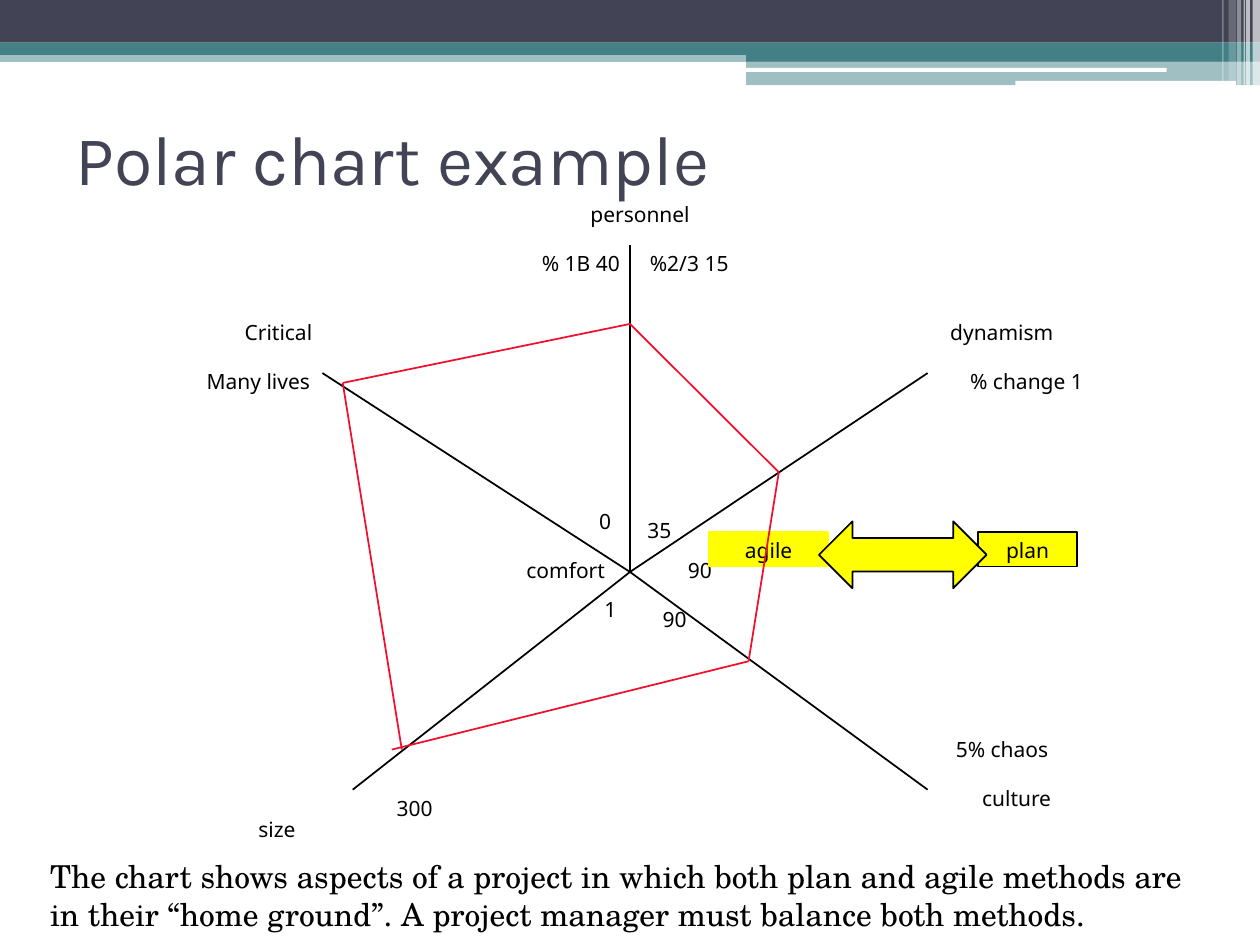
from collections import namedtuple
from dataclasses import dataclass
from itertools import pairwise

from lxml.etree import SubElement
from pptx import Presentation
from pptx.dml.color import RGBColor
from pptx.enum.shapes import MSO_CONNECTOR, MSO_SHAPE
from pptx.enum.text import MSO_ANCHOR, PP_ALIGN
from pptx.oxml.ns import qn
from pptx.util import Cm, Pt

Box = namedtuple("Box", "x y w h")  # centimetres


@dataclass(frozen=True)
class Theme:
    navy: str = "424456"
    teal: str = "438086"
    white: str = "FFFFFF"
    black: str = "000000"
    red: str = "F00F2C"
    yellow: str = "FFFF00"
    title_font: str = "Karla"
    label_font: str = "Noto Sans"
    body_font: str = "TeX Gyre Schola"
    title_size: int = 40
    label_size: int = 12
    body_size: int = 18
    line_width: int = 1


THEME = Theme()
LABEL_HEIGHT = 0.64

# Lengths below are offsets from the hub of the chart.
AXIS_ENDS = [(-6.2, -4.01), (0, -6.6), (6, -4.01), (-5.59, 4.39), (6, 4.39)]
PROFILE = [(-4.6, 3.58), (-5.79, -3.81), (0, -5), (3, -2.01), (2.39, 1.8), (-4.8, 3.58)]
LABELS = [  # text, left, top, width
    ("Critical", -8.99, -5.21, 3.81),
    ("personnel", -1.19, -7.59, 2.79),
    ("dynamism", 5.59, -5.21, 3.81),
    ("culture", 6.4, 4.19, 2.79),
    ("size", -8.41, 4.8, 2.59),
    ("Many lives", -8.99, -4.22, 3),
    ("comfort", -2.59, -0.41, 2.59),
    ("% 1B 40", -2.59, -6.6, 3.2),
    ("0", -1, -1.4, 1),
    ("%2/3 15", 0, -6.6, 2.39),
    ("35", 0, -1.22, 1.19),
    ("% change 1", 6.6, -4.22, 2.79),
    ("90", 0.61, -0.41, 1.6),
    ("5% chaos", 6, 3.2, 3),
    ("90", 0, 0.58, 1.8),
    ("1", -0.79, 0.38, 0.79),
    ("300", -5, 4.39, 1.32),
]


def to_cm(box):
    return [Cm(v) for v in box]


def add_text(sp, text, *, font=THEME.label_font, size=THEME.label_size,
             color=THEME.black, align=PP_ALIGN.LEFT, anchor=MSO_ANCHOR.TOP, bottom=0.13):
    tf = sp.text_frame
    tf.word_wrap = True
    tf.vertical_anchor = anchor
    tf.margin_bottom = Cm(bottom)
    p = tf.paragraphs[0]
    p.alignment = align
    r = p.add_run()
    r.text = text
    r.font.name = font
    r.font.size = Pt(size)
    r.font.color.rgb = RGBColor.from_string(color)


def add_label(sp, text):
    add_text(sp, text, align=PP_ALIGN.CENTER, bottom=0)


def add_block(s, box, fill, *, kind=MSO_SHAPE.RECTANGLE, line=None, opacity=100):
    sp = s.shapes.add_shape(kind, *to_cm(box))
    sp.shadow.inherit = False
    sp.fill.solid()
    sp.fill.fore_color.rgb = RGBColor.from_string(fill)
    if opacity < 100:
        color = sp._element.spPr.find(qn("a:solidFill"))[0]
        SubElement(color, qn("a:alpha")).set("val", str(opacity * 1000))
    if line:
        sp.line.color.rgb = RGBColor.from_string(line)
        sp.line.width = Pt(THEME.line_width)
    else:
        sp.line.fill.background()
    return sp


def add_line(s, start, end, color):
    line = s.shapes.add_connector(MSO_CONNECTOR.STRAIGHT, *to_cm(start + end))
    line.line.color.rgb = RGBColor.from_string(color)
    line.line.width = Pt(THEME.line_width)
    SubElement(line._element.spPr, qn("a:effectLst"))


def draw_header(s, box):
    half = box.w - 15.04
    bands = [  # left, top, width, height, colour, opacity
        (0, 1.02, box.w, 0.23, THEME.teal, 50),
        (0, 0, box.w, 0.86, THEME.navy, 100),
        (0, 0.86, box.w, 0.25, THEME.teal, 100),
        (15.04, 0.99, half, 0.25, THEME.teal, 100),
        (15.04, 1.22, half, 0.5, THEME.teal, 50),
    ]
    for x, y, w, h, color, opacity in bands:
        add_block(s, Box(box.x + x, box.y + y, w, h), color, opacity=opacity)

    for x, y, w, h in [(15.01, 1.37, 8.51, 0.08), (20.47, 1.63, 4.45, 0.1)]:
        add_block(s, Box(box.x + x, box.y + y, w, h), THEME.white,
                  kind=MSO_SHAPE.ROUNDED_RECTANGLE)

    stripes = [  # distance from the right edge, width, height, opacity
        (0.15, 0.15, box.h, 65), (0.28, 0.08, box.h, 65), (0.33, 0.03, box.h, 60),
        (0.46, 0.08, box.h, 40), (0.63, 0.15, 1.63, 20), (0.76, 0.03, 1.63, 30),
    ]
    for inset, w, h, opacity in stripes:
        add_block(s, Box(box.x + box.w - inset, box.y, w, h), THEME.white, opacity=opacity)


def draw_title(s, box):
    add_text(s.shapes.add_textbox(*to_cm(box)), "Polar chart example",
             font=THEME.title_font, size=THEME.title_size, color=THEME.navy,
             anchor=MSO_ANCHOR.MIDDLE)


def draw_polar_chart(s, box):
    """Place axes, labels, method scale and project profile around the box centre."""
    hub_x, hub_y = box.x + box.w / 2, box.y + box.h / 2

    def at(x, y, *size):
        return (hub_x + x, hub_y + y, *size)

    for end in AXIS_ENDS:
        add_line(s, at(0, 0), at(*end), THEME.black)
    for text, x, y, w in LABELS:
        add_label(s.shapes.add_textbox(*to_cm(at(x, y, w, LABEL_HEIGHT))), text)

    for text, x, w, line in [("agile", 1.6, 2.39, THEME.yellow),
                             ("plan", 7.01, 2.01, THEME.black)]:
        add_label(add_block(s, at(x, -0.81, w, 0.7), THEME.yellow, line=line), text)
    add_block(s, at(3.81, -1.02, 3.38, 1.35), THEME.yellow,
              kind=MSO_SHAPE.LEFT_RIGHT_ARROW, line=THEME.black)

    for start, end in pairwise(PROFILE):
        add_line(s, at(*start), at(*end), THEME.red)


def draw_caption(s, box):
    add_text(s.shapes.add_textbox(*to_cm(box)),
             "The chart shows aspects of a project in which both plan and agile methods are "
             "in their “home ground”. A project manager must balance both methods.",
             font=THEME.body_font, size=THEME.body_size)


def main():
    prs = Presentation()
    prs.slide_width, prs.slide_height = Cm(25.4), Cm(19.05)
    s = prs.slides.add_slide(prs.slide_layouts[6])
    draw_header(s, Box(0, 0, 25.4, 1.73))
    draw_title(s, Box(1.27, 1.7, 22.86, 2.97))
    draw_polar_chart(s, Box(3.7, 3.93, 18, 15.2))
    draw_caption(s, Box(0.76, 17.15, 23.95, 1.8))
    prs.save("out.pptx")


if __name__ == "__main__":
    main()
